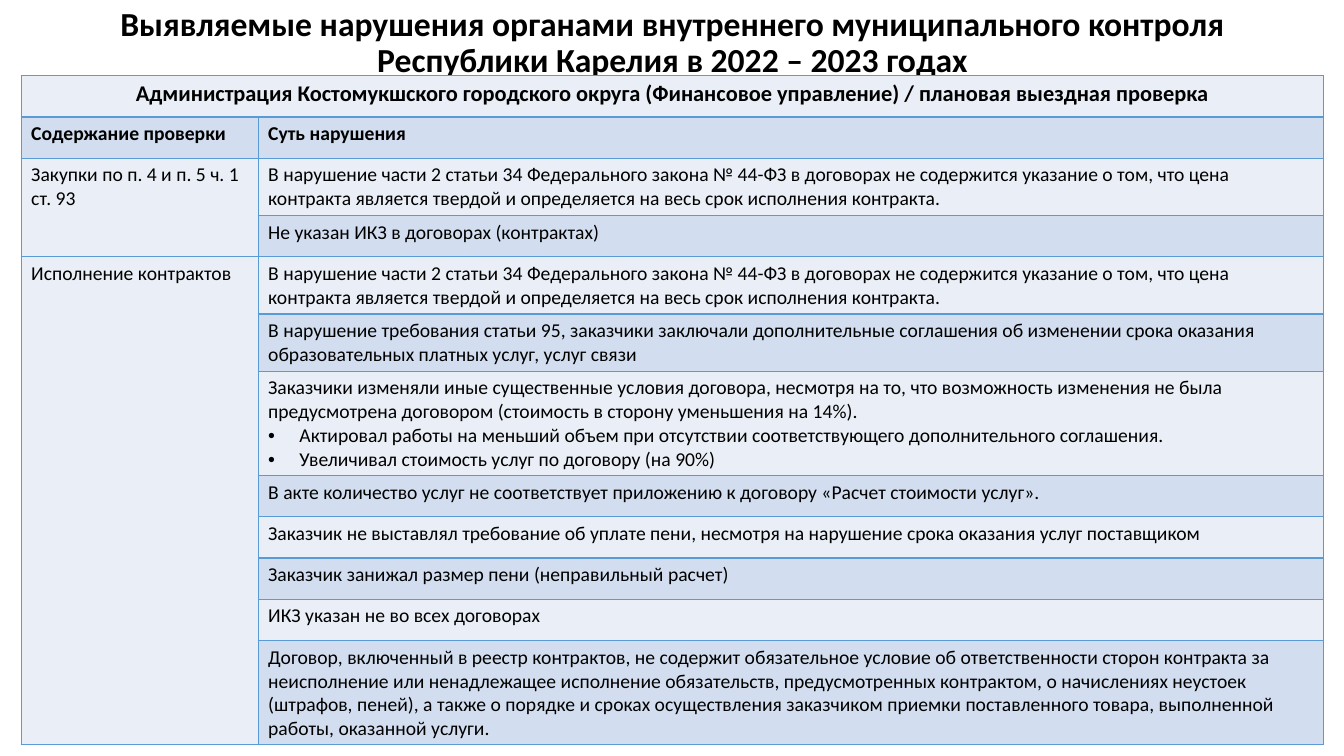
"""Build a slide with a table of violations found by municipal control."""
from lxml import etree
from pptx import Presentation
from pptx.dml.color import RGBColor
from pptx.enum.text import MSO_ANCHOR, PP_ALIGN
from pptx.oxml.ns import qn
from pptx.util import Inches, Pt

CENTER, LEFT, MIDDLE = PP_ALIGN.CENTER, PP_ALIGN.LEFT, MSO_ANCHOR.MIDDLE
FONT = "Calibri"
COLORS = {"text": "000000", "line": "5B9BD5", "light": "EAEFF7", "dark": "D2DEEF"}
BULLET = "•"
HEAD = "Выявляемые нарушения органами внутреннего муниципального контроля Республики Карелия в 2022 – 2023 годах"
PRICE = (
    "В нарушение части 2 статьи 34 Федерального закона № 44-ФЗ в договорах не содержится "
    "указание о том, что цена контракта является твердой и определяется на весь срок исполнения контракта."
)
ROWS = [
    ("Администрация Костомукшского городского округа (Финансовое управление) / плановая выездная проверка", ""),
    ("Содержание проверки", "Суть нарушения"),
    ("Закупки по п. 4 и п. 5 ч. 1 ст. 93", PRICE),
    ("", "Не указан ИКЗ в договорах (контрактах)"),
    ("Исполнение контрактов", PRICE),
    ("", "В нарушение требования статьи 95, заказчики заключали дополнительные соглашения "
         "об изменении срока оказания образовательных платных услуг, услуг связи"),
    ("", "Заказчики изменяли иные существенные условия договора, несмотря на то, что возможность "
         "изменения не была предусмотрена договором (стоимость в сторону уменьшения на 14%).\n"
         "•Актировал работы на меньший объем при отсутствии соответствующего дополнительного соглашения.\n"
         "•Увеличивал стоимость услуг по договору (на 90%)"),
    ("", "В акте количество услуг не соответствует приложению к договору «Расчет стоимости услуг»."),
    ("", "Заказчик не выставлял требование об уплате пени, несмотря на нарушение срока оказания услуг поставщиком"),
    ("", "Заказчик занижал размер пени (неправильный расчет)"),
    ("", "ИКЗ указан не во всех договорах"),
    ("", "Договор, включенный в реестр контрактов, не содержит обязательное условие об ответственности "
         "сторон контракта за неисполнение или ненадлежащее исполнение обязательств, предусмотренных "
         "контрактом, о начислениях неустоек (штрафов, пеней), а также о порядке и сроках осуществления "
         "заказчиком приемки поставленного товара, выполненной работы, оказанной услуги."),
]
COLS = [2.35, 10.57]
STEP = 0.41
SPANS = [(0, 0, 0, 1), (2, 0, 3, 0), (4, 0, 11, 0)]


def write(frame, text, size, bold, align):
    """Fill a text frame, one paragraph a line, with bullets where marked."""
    frame.text = text.replace(BULLET, "")
    for par, line in zip(frame.paragraphs, text.split("\n")):
        par.alignment = align
        if line.startswith(BULLET):
            props = par._p.get_or_add_pPr()
            props.set("marL", str(Inches(0.31)))
            props.set("indent", str(-Inches(0.31)))
            etree.SubElement(props, qn("a:buFont"), typeface="Arial")
            etree.SubElement(props, qn("a:buChar"), char=BULLET)
        font = par.font
        font.name, font.size, font.bold = FONT, Pt(size), bold
        font.color.rgb = RGBColor.from_string(COLORS["text"])


def border(cell):
    """Draw all four sides of a cell."""
    props = cell._tc.get_or_add_tcPr()
    for side in ("lnL", "lnR", "lnT", "lnB"):
        line = etree.SubElement(props, qn(f"a:{side}"), w=str(Pt(1)))
        fill = etree.SubElement(line, qn("a:solidFill"))
        etree.SubElement(fill, qn("a:srgbClr"), val=COLORS["line"])


deck = Presentation()
deck.slide_width, deck.slide_height = Inches(13.33), Inches(7.5)
slide = deck.slides.add_slide(deck.slide_layouts[6])

title = slide.shapes.add_textbox(Inches(0.92), Inches(0.11), Inches(11.5), Inches(0.64)).text_frame
title.word_wrap = True
title.vertical_anchor = MIDDLE
write(title, HEAD, 24, True, CENTER)
title.paragraphs[0].line_spacing = 0.9

table = slide.shapes.add_table(
    len(ROWS), len(COLS), Inches(0.21), Inches(0.75), Inches(sum(COLS)), Inches(STEP * len(ROWS))
).table
for col, width in zip(table.columns, COLS):
    col.width = Inches(width)

for r, row in enumerate(ROWS):
    table.rows[r].height = Inches(STEP)
    for c, text in enumerate(row):
        cell = table.cell(r, c)
        write(cell.text_frame, text, 14 if r else 16, r < 2, LEFT if r else CENTER)
        border(cell)
        dark = r % 2 and (c or r == 1)
        cell.fill.solid()
        cell.fill.fore_color.rgb = RGBColor.from_string(COLORS["dark" if dark else "light"])

for top, left, bottom, right in SPANS:
    table.cell(top, left).merge(table.cell(bottom, right))

deck.save("out.pptx")
